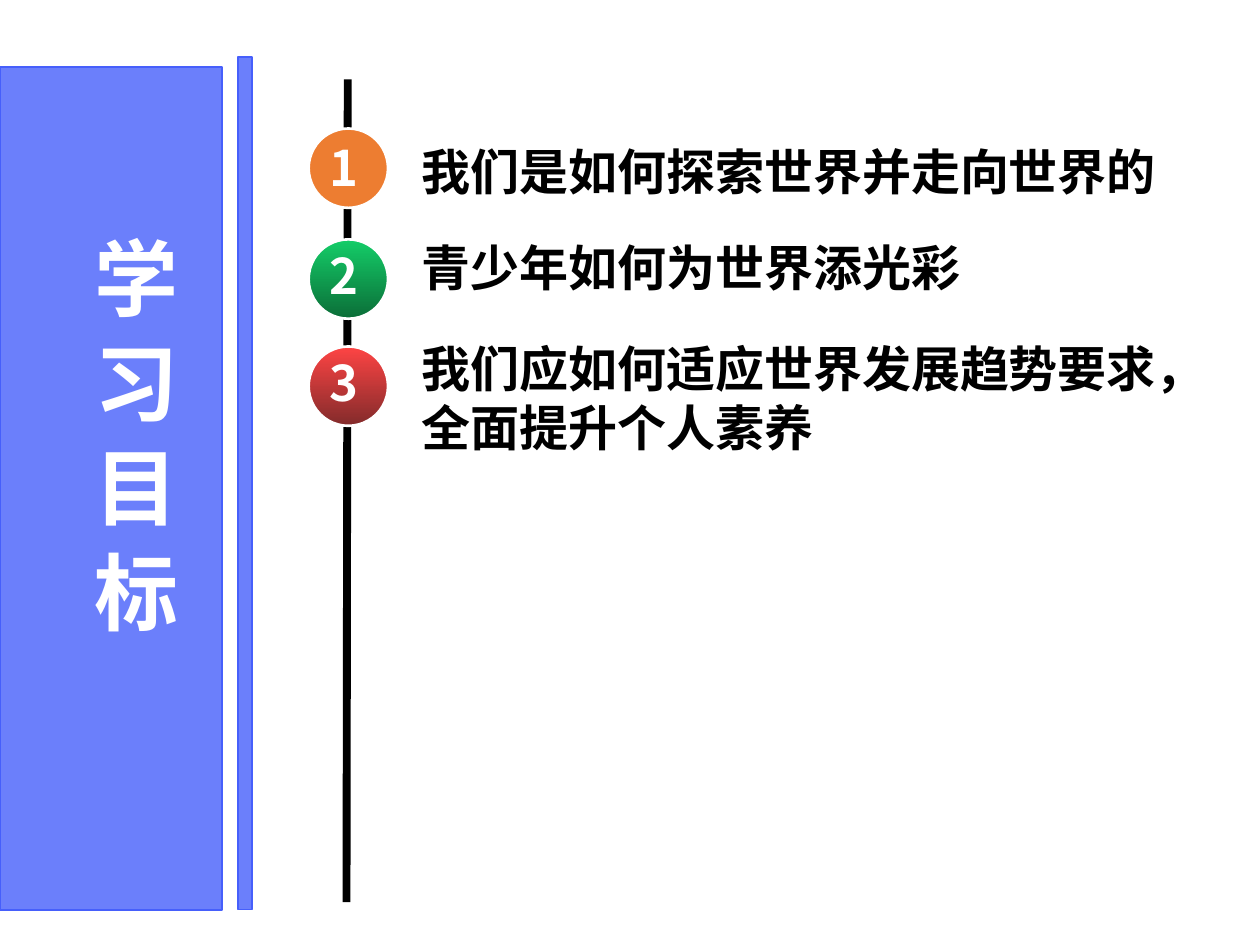
from lxml import etree
from pptx import Presentation, util as u
from pptx.dml.color import RGBColor
from pptx.enum import shapes, text
from pptx.oxml.ns import qn

COLORS = {
    "panel": "465FFB", "ink": "000000", "paper": "FFFFFF", "orange": "ED7D31",
    "green": "14CD68", "dark green": "0B6E38", "red": "FE4444", "dark red": "832B2B",
}
FONT = "Noto Sans CJK SC"
COLUMNS, ROWS = 100, 75
SLIDE_SIZE = u.Inches(10), u.Inches(7.5)
CELL = SLIDE_SIZE[0] / COLUMNS
FRAME = {"word_wrap": True, "auto_size": text.MSO_AUTO_SIZE.SHAPE_TO_FIT_TEXT}
GOALS = [
    ("我们是如何探索世界并走向世界的", ["orange"], 3.9, (3.3, 61.3, 6.8), 41.6),
    ("青少年如何为世界添光彩", ["green", "dark green"], 12.7, (11.8, 45.7, 6), 35.6),
    ("我们应如何适应世界发展趋势要求，全面提升个人素养", ["red", "dark red"],
     21.2, (20.1, 64, 10.4), None),
]


def rgb(name):
    return RGBColor.from_string(COLORS[name])


def apply(target, values):
    for key, value in values.items():
        setattr(target, key, value)


def within(box, left, top, width, height):
    return [round(n * CELL) for n in (box[0] + left, box[1] + top, width, height)]


def paint(part, fills, edge, weight, alpha=None):
    part.shadow.inherit = False
    if len(fills) > 1:
        part.fill.gradient()
        part.fill.gradient_angle = 270
        for stop, name in zip(part.fill.gradient_stops, fills):
            stop.color.rgb = rgb(name)
    else:
        part.fill.solid()
        part.fill.fore_color.rgb = rgb(fills[0])
    if alpha:
        tint = part.fill._xPr.find(qn("a:solidFill"))[0]
        etree.SubElement(tint, qn("a:alpha")).set("val", str(alpha * 1000))
    part.line.color.rgb = rgb(edge)
    part.line.width = u.Pt(weight)


def write(parent, area, words, size, color, spacing=None, vertical=False):
    frame = parent.add_textbox(*area).text_frame
    apply(frame, FRAME)
    if vertical:
        frame._txBody.bodyPr.set("vert", "eaVert")
    paragraph = frame.paragraphs[0]
    if spacing:
        paragraph.line_spacing = u.Pt(spacing)
    run = paragraph.add_run()
    run.text = words
    apply(run.font, {"name": FONT, "size": u.Pt(size), "bold": True})
    run.font.color.rgb = rgb(color)
    etree.SubElement(run._r.get_or_add_rPr(), qn("a:ea")).set("typeface", FONT)


def add_sidebar(slide, box):
    height = box[3]
    for left, top, width in ((0, 0.8, 17.6), (18.9, 0, 1.1)):
        panel = slide.shapes.add_shape(
            shapes.MSO_SHAPE.RECTANGLE, *within(box, left, top, width, height - top))
        paint(panel, ["panel"], "panel", 1, alpha=80)
    write(slide.shapes, within(box, 5, 13.3, 10.1, 35.7), "学 习 目 标", 48, "paper",
          vertical=True)


def add_timeline(slide, box):
    left, top, _, height = within(box, 3.1, 0, 0, box[3])
    spine = slide.shapes.add_connector(
        shapes.MSO_CONNECTOR.STRAIGHT, left, top, left - round(CELL / 10), top + height)
    spine.line.color.rgb = rgb("ink")
    spine.line.width = u.Pt(4.5)
    etree.SubElement(spine._element.spPr, qn("a:effectLst"))


def add_badge(slide, box, number, fills):
    badge = slide.shapes.add_group_shape().shapes
    disc = badge.add_shape(shapes.MSO_SHAPE.OVAL, *within(box, 0, 0, box[2], box[3]))
    paint(disc, fills, "paper", 1.5)
    drop = 0.2 if number == 1 else 0
    write(badge, within(box, 0.7, drop, 4.8, 5.7), str(number), 28, "paper")


def add_goals(slide, box):
    add_timeline(slide, box)
    for number, (goal, fills, badge_top, (top, width, height), spacing) in enumerate(GOALS, 1):
        write(slide.shapes, within(box, 8, top, width, height), goal, 28, "ink", spacing)
        add_badge(slide, (box[0], box[1] + badge_top, 6.3, 6.3), number, fills)


def main():
    deck = Presentation()
    apply(deck, dict(zip(("slide_width", "slide_height"), SLIDE_SIZE)))
    slide = deck.slides.add_slide(deck.slide_layouts[6])
    add_sidebar(slide, (0, 4.5, 20, ROWS - 7.3))
    add_goals(slide, (24.5, 6.3, COLUMNS - 24.5, 65.3))
    deck.save("out.pptx")


if __name__ == "__main__":
    main()
